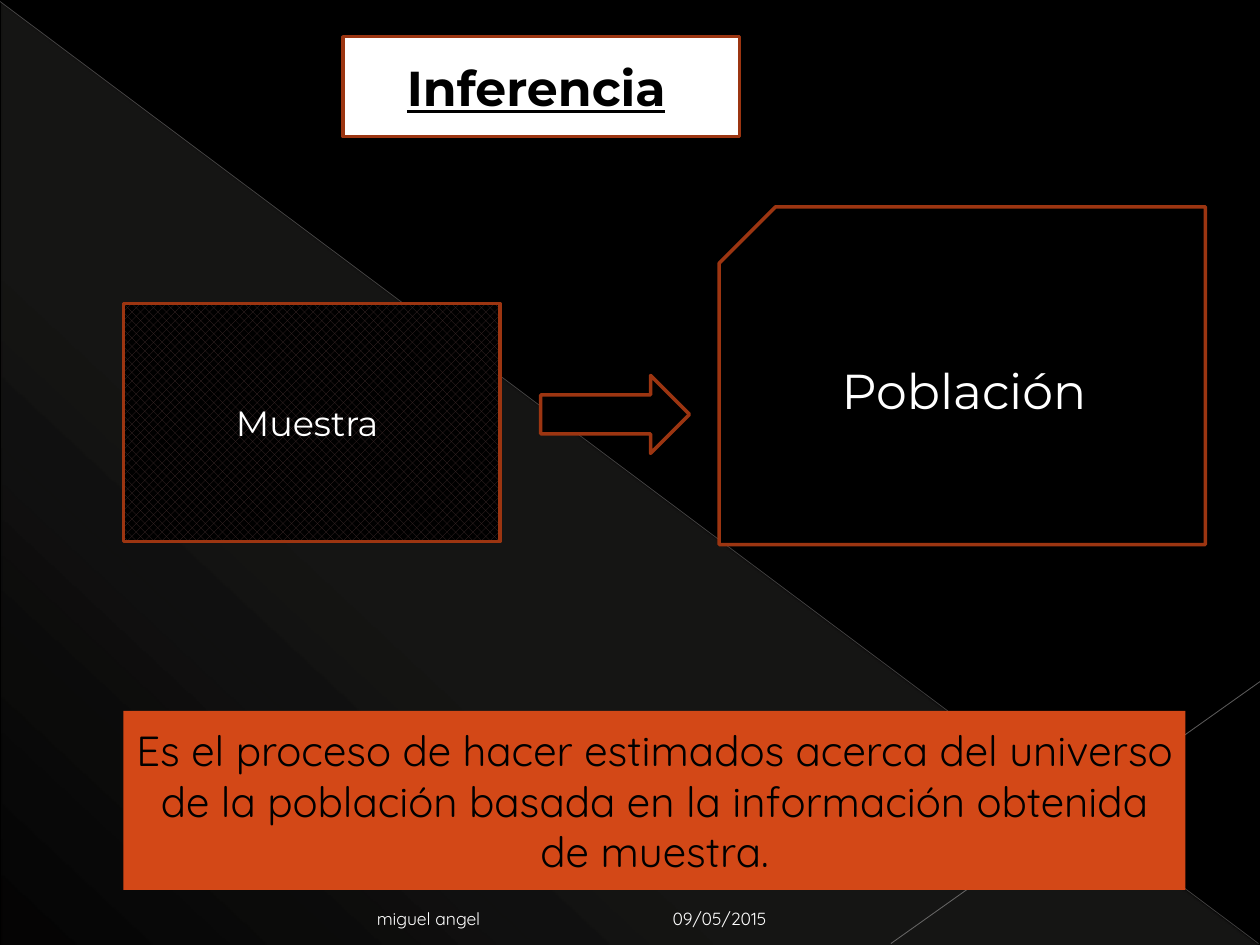
import pptx
import pptx.util
import pptx.dml.color
import pptx.enum.dml
import pptx.enum.shapes
import pptx.enum.text
import pptx.oxml
import pptx.oxml.ns
import lxml.etree

Cm, Pt = pptx.util.Cm, pptx.util.Pt
KIND = pptx.enum.shapes.MSO_SHAPE
ALIGN = pptx.enum.text.PP_ALIGN
ANCHOR = pptx.enum.text.MSO_ANCHOR
QN = pptx.oxml.ns.qn

THEME = {
    "black": "000000", "white": "FFFFFF", "orange": "D34817", "rust": "9C3511",
    "brown": "422E2E", "sand": "E9E5DC", "gray": "C1BEBE", "silver": "C7C5C5",
    "head": "Montserrat", "body": "Quicksand",
    "big": 28, "lead": 24, "mid": 20, "small": 10, "edge": 2,
}

# Places are left, top, width, height in cm
TITLE = ("Inferencia", (6.91, 0.74, 8, 2.01))
BOXES = [
    {"kind": KIND.RECTANGLE, "at": (2.49, 6.12, 7.59, 4.8), "fill": "mesh", "edge": "rust",
     "text": "Muestra ", "style": {"size": "mid"}},
    {"kind": KIND.SNIP_1_RECTANGLE, "at": (14.5, 4.17, 9.8, 6.81), "fill": "black",
     "edge": "rust", "flip": True, "text": "Población",
     "style": {"size": "big", "right": 0.75}},
    {"kind": KIND.RIGHT_ARROW, "at": (10.9, 7.57, 3, 1.57), "fill": "black", "edge": "rust"},
    {"kind": KIND.RECTANGLE, "at": (2.49, 14.33, 21.41, 3.61), "fill": "orange",
     "text": "Es el proceso de hacer estimados acerca del universo de la población "
             "basada en la información obtenida de muestra.",
     "style": {"size": "lead", "font": "body", "color": "black"}},
]
NOTES = [
    ("09/05/2015", (13.31, 18.01, 5.92, 0.84), {"align": ALIGN.LEFT}),
    ("miguel angel", (1.27, 18.01, 11.84, 0.84), {"align": ALIGN.RIGHT, "right": 3.43}),
]
WEDGE = (0.03, 0.05, 25.35, 19)
FADE = [(0, 10), (70, 8), (100, 1)]  # position and opacity in percent
TILT = 133
RAYS = [  # from x, y to x, y; colour, width, opacity
    ((0, 0.03, 25.37, 19.02), "gray", 0.39, 35),
    ((25.4, 13.74, 17.96, 19.02), "silver", 0.47, 45),
]


def color(name):
    return pptx.dml.color.RGBColor.from_string(THEME[name])


def cms(at):
    return [Cm(n) for n in at]


def write(shape, text, size="small", font="head", color_name=None, color="white",
          align=ALIGN.CENTER, anchor=ANCHOR.MIDDLE, strong=False, right=0.25):
    frame = shape.text_frame
    frame.word_wrap = True
    frame.auto_size = pptx.enum.text.MSO_AUTO_SIZE.NONE
    frame.vertical_anchor = anchor
    frame.margin_left, frame.margin_right = Cm(0.25), Cm(right)
    frame.margin_top = frame.margin_bottom = Cm(0.13)
    para = frame.paragraphs[0]
    para.alignment = align
    run = para.add_run()
    run.text = text
    face = run.font
    face.name, face.size = THEME[font], Pt(THEME[size])
    face.bold = face.underline = strong
    face.color.rgb = pptx.dml.color.RGBColor.from_string(THEME[color])


def paint(shape, fill, edge=None):
    if fill == "mesh":
        shape.fill.patterned()
        shape.fill.pattern = pptx.enum.dml.MSO_PATTERN.PERCENT_50
        shape.fill.fore_color.rgb = color("brown")
        shape.fill.back_color.rgb = color("black")
    else:
        shape.fill.solid()
        shape.fill.fore_color.rgb = color(fill)
    if edge:
        shape.line.color.rgb = color(edge)
        shape.line.width = Pt(THEME["edge"])
    else:
        shape.line.fill.background()


def add_wedge(slide):
    shape = slide.shapes.add_shape(KIND.RIGHT_TRIANGLE, *cms(WEDGE))
    shape.shadow.inherit = False
    shape.line.fill.background()
    stops = "".join(
        f'<a:gs pos="{pos * 1000}"><a:srgbClr val="{THEME["sand"]}">'
        f'<a:alpha val="{alpha * 1000}"/></a:srgbClr></a:gs>' for pos, alpha in FADE)
    grad = pptx.oxml.parse_xml(
        f'<a:gradFill {pptx.oxml.ns.nsdecls("a")} rotWithShape="1"><a:gsLst>{stops}</a:gsLst>'
        f'<a:lin ang="{TILT * 60000}" scaled="0"/></a:gradFill>')
    shape._element.spPr.find(QN("a:prstGeom")).addnext(grad)


def add_ray(slide, ends, tint, width, alpha):
    line = slide.shapes.add_connector(pptx.enum.shapes.MSO_CONNECTOR.STRAIGHT, *cms(ends))
    line.line.color.rgb = color(tint)
    line.line.width = Pt(width)
    props = line._element.spPr
    clr = props.find(".//" + QN("a:srgbClr"))
    lxml.etree.SubElement(clr, QN("a:alpha")).set("val", str(alpha * 1000))
    lxml.etree.SubElement(props, QN("a:effectLst"))


def add_box(slide, box):
    shape = slide.shapes.add_shape(box["kind"], *cms(box["at"]))
    shape.shadow.inherit = False
    paint(shape, box["fill"], box.get("edge"))
    if box.get("flip"):
        shape._element.spPr.find(QN("a:xfrm")).set("flipH", "1")
    if "text" in box:
        write(shape, box["text"], **box["style"])


def main():
    deck = pptx.Presentation()
    deck.slide_width, deck.slide_height = Cm(25.4), Cm(19.05)
    slide = deck.slides.add_slide(deck.slide_layouts[5])
    slide.background.fill.solid()
    slide.background.fill.fore_color.rgb = color("black")
    add_wedge(slide)
    for ray in RAYS:
        add_ray(slide, *ray)
    text, at = TITLE
    title = slide.shapes.title
    title.left, title.top, title.width, title.height = cms(at)
    paint(title, "white", "rust")
    write(title, text, size="big", color="black", strong=True, right=0.45)
    for box in BOXES:
        add_box(slide, box)
    for text, at, style in NOTES:
        note = slide.shapes.add_textbox(*cms(at))
        write(note, text, font="body", anchor=ANCHOR.BOTTOM, **style)
    deck.save("out.pptx")


if __name__ == "__main__":
    main()
